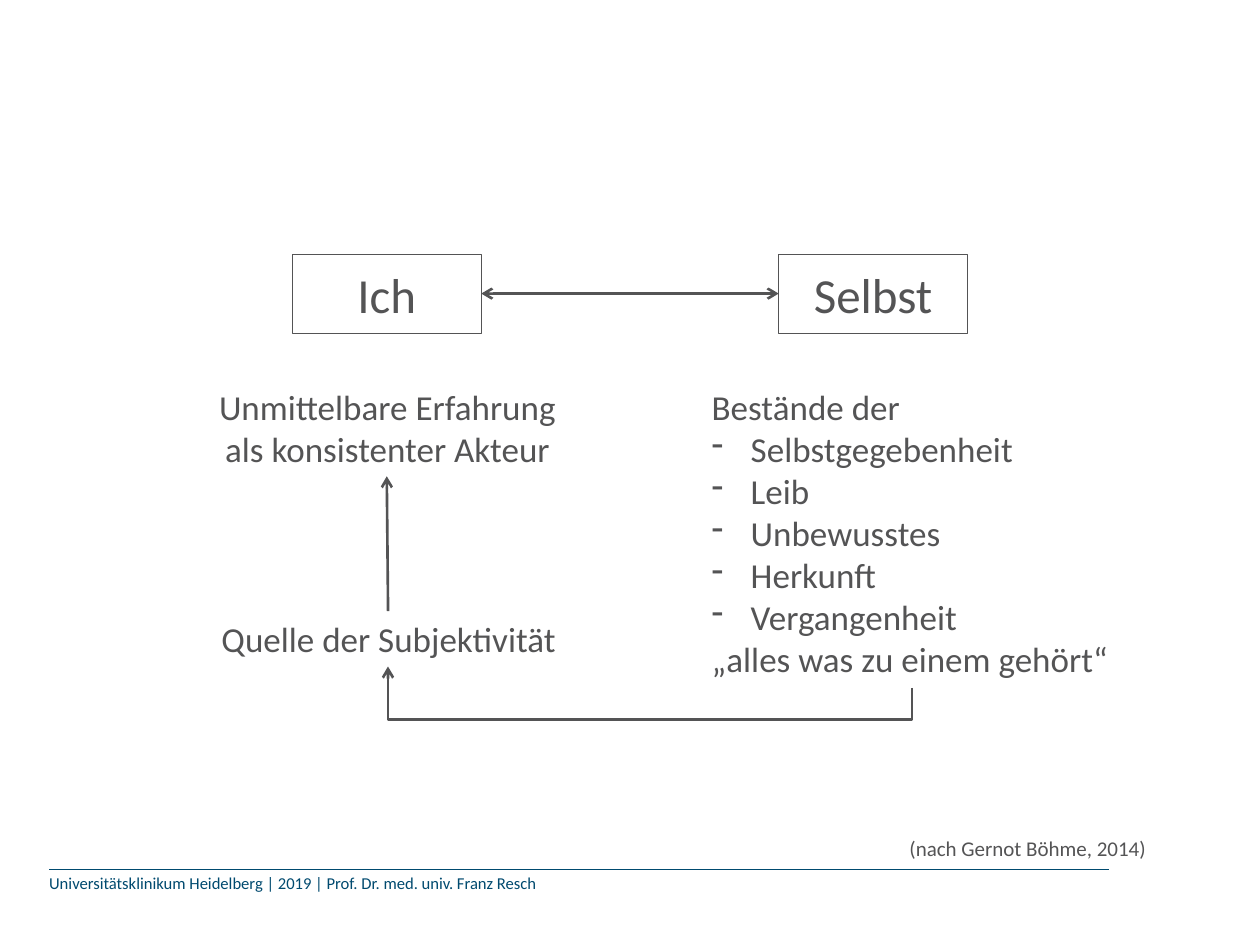
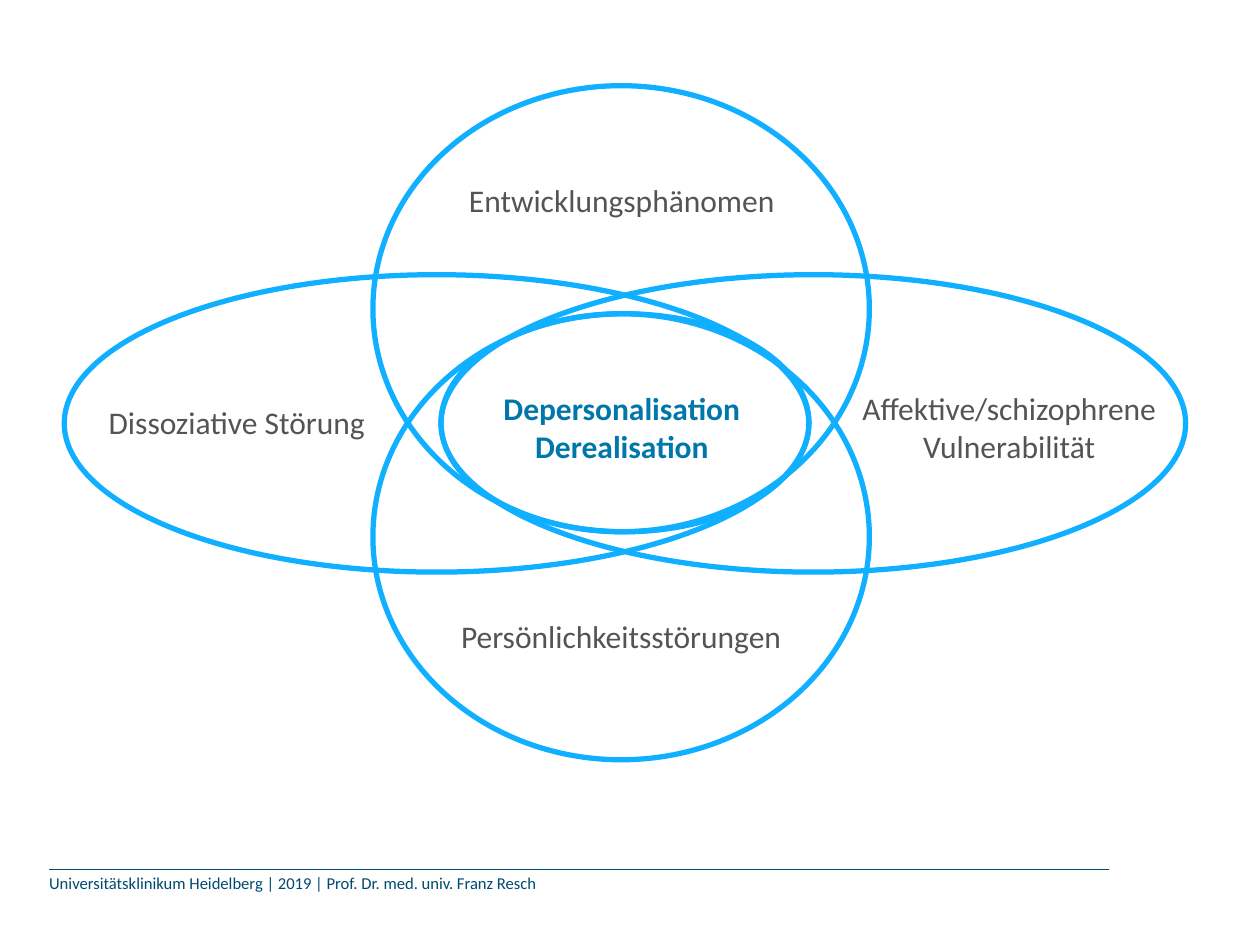
from dataclasses import dataclass

from pptx import Presentation
from pptx.dml.color import RGBColor
from pptx.enum.shapes import MSO_CONNECTOR as Connector, MSO_SHAPE as Preset
from pptx.enum.text import MSO_ANCHOR as Anchor, PP_ALIGN as Align
from pptx.oxml.ns import qn
from pptx.oxml.xmlchemy import OxmlElement
from pptx.util import Inches, Pt

WIDTH, HEIGHT = Inches(10), Inches(7.5)


@dataclass(frozen=True)
class Theme:
    font: str = "Calibri"
    grey: str = "545455"
    navy: str = "004A6F"
    blue: str = "0077AA"
    sky: str = "10AFFF"
    footer_size: float = 9.5
    source_size: float = 12
    label_size: float = 18
    body_size: float = 20
    box_size: float = 28
    hairline: float = 0.75
    arrow: float = 1.5
    ring: float = 3


THEME = Theme()


def across(percent):
    """Share of the slide width, in percent."""
    return round(WIDTH * percent / 100)


def down(percent):
    """Share of the slide height, in percent."""
    return round(HEIGHT * percent / 100)


def area(left, top, width, height):
    return across(left), down(top), across(width), down(height)


def write(frame, lines, size, color=THEME.grey, bold=False, align=Align.CENTER):
    frame.text = "\n".join(lines)
    for para in frame.paragraphs:
        if para.text.startswith("- "):
            para.text = para.text[2:]
            add_dash(para)
        para.alignment = align
        for span in para.runs:
            span.font.name = THEME.font
            span.font.size = Pt(size)
            span.font.bold = bold
            span.font.color.rgb = RGBColor.from_string(color)


def add_dash(para):
    """Turn the paragraph into a hanging item with a dash bullet."""
    indent = Inches(0.31)
    properties = para._p.get_or_add_pPr()
    properties.set("marL", str(indent))
    properties.set("indent", str(-indent))
    bullet = OxmlElement("a:buChar")
    bullet.set("char", "-")
    properties.append(bullet)


def add_text(page, place, lines, size, wrap=False, **style):
    box = page.shapes.add_textbox(*area(*place))
    box.text_frame.word_wrap = wrap
    write(box.text_frame, lines, size, **style)
    return box


def add_outline(page, preset, place, color, weight):
    shape = page.shapes.add_shape(preset, *area(*place))
    shape.shadow.inherit = False
    shape.fill.background()
    shape.line.color.rgb = RGBColor.from_string(color)
    shape.line.width = Pt(weight)
    return shape


def add_line(page, begin, end, color=THEME.grey, weight=THEME.arrow,
             arrows=(), kind=Connector.STRAIGHT):
    """Connect two points given in EMU; arrows names the ends with a head."""
    line = page.shapes.add_connector(kind, *begin, *end)
    line.line.color.rgb = RGBColor.from_string(color)
    line.line.width = Pt(weight)
    properties = line.element.spPr
    for name in arrows:
        tip = OxmlElement(f"a:{name}")
        tip.set("type", "arrow")
        properties.find(qn("a:ln")).append(tip)
    properties.append(OxmlElement("a:effectLst"))
    return line


def add_loop_below(page, begin, end, drop):
    """Elbow arrow leading left, running the given drop below its beginning."""
    (begin_x, begin_y), (end_x, end_y) = begin, end
    middle_x, middle_y = (begin_x + end_x) // 2, (begin_y + end_y) // 2
    rise, reach = begin_y - end_y, begin_x - end_x
    # The elbow lies upright before the quarter turn.
    loop = add_line(
        page,
        (middle_x + rise // 2, middle_y - reach // 2),
        (middle_x - rise // 2, middle_y + reach // 2),
        arrows=("tailEnd",), kind=Connector.ELBOW)
    properties = loop.element.spPr
    properties.find(qn("a:xfrm")).set("rot", str(90 * 60000))
    bend = OxmlElement("a:gd")
    bend.set("name", "adj1")
    bend.set("fmla", f"val {round(-100000 * drop / rise)}")
    properties.find(qn("a:prstGeom")).get_or_add_avLst().append(bend)


def add_page(deck):
    """Blank page with the footer rule and line."""
    page = deck.slides.add_slide(deck.slide_layouts[6])
    add_line(page, (across(3.9), down(92)), (across(88), down(92)),
             THEME.navy, THEME.hairline)
    footer = add_text(
        page, (3.9, 92.4, 78.7, 2.13),
        ["Universitätsklinikum Heidelberg | 2019 | Prof. Dr. med. univ. Franz Resch"],
        THEME.footer_size, wrap=True, color=THEME.navy, align=Align.LEFT)
    frame = footer.text_frame
    frame.margin_left = frame.margin_right = 0
    frame.margin_top = frame.margin_bottom = 0
    return page


def build_self_model(deck):
    page = add_page(deck)
    for left, name in ((23.2, "Ich"), (61.8, "Selbst")):
        box = add_outline(page, Preset.RECTANGLE, (left, 26.93, 15, 8.4),
                          THEME.grey, THEME.hairline)
        box.text_frame.vertical_anchor = Anchor.MIDDLE
        write(box.text_frame, [name], THEME.box_size)

    add_text(page, (55.5, 40.13, 33.8, 32.8),
             ["Bestände der", "- Selbstgegebenheit", "- Leib", "- Unbewusstes",
              "- Herkunft", "- Vergangenheit", "„alles was zu einem gehört“"],
             THEME.body_size, align=Align.LEFT)
    add_text(page, (16.2, 40.13, 29.1, 10.27),
             ["Unmittelbare Erfahrung", "als konsistenter Akteur"], THEME.body_size)
    add_text(page, (16.4, 64.67, 28.9, 5.87),
             ["Quelle der Subjektivität"], THEME.body_size)

    add_line(page, (across(38.2), down(31.07)), (across(61.8), down(31.07)),
             arrows=("headEnd", "tailEnd"))
    add_loop_below(page, (across(72.4), down(72.8)), (across(30.8), down(70.53)),
                   drop=down(3.33))
    add_line(page, (across(30.8), down(64.67)), (across(30.7), down(50.4)),
             arrows=("tailEnd",))
    add_text(page, (71.2, 87.73, 21.4, 4), ["(nach Gernot Böhme, 2014)"],
             THEME.source_size, align=Align.LEFT)


def build_overlap(deck):
    page = add_page(deck)
    add_text(page, (36.9, 40.53, 24.9, 9.47), ["Depersonalisation", "Derealisation"],
             THEME.label_size, wrap=True, color=THEME.blue, bold=True)
    labels = (
        ((33.1, 18.53, 32.5, 5.33), ["Entwicklungsphänomen"]),
        ((5.1, 42, 27.4, 5.33), ["Dissoziative Störung"]),
        ((65.7, 40.53, 28.8, 9.47), ["Affektive/schizophrene", "Vulnerabilität"]),
        ((32.2, 64.67, 34.2, 5.33), ["Persönlichkeitsstörungen"]),
    )
    for place, lines in labels:
        add_text(page, place, lines, THEME.label_size, wrap=True)

    upper, lower = (29.6, 9.07, 39.4, 47.2), (29.6, 33.2, 39.4, 47.2)
    left, right = (5.1, 29.07, 59.1, 31.47), (35, 29.07, 59.1, 31.47)
    core = (right[0], lower[1],
            left[0] + left[2] - right[0], upper[1] + upper[3] - lower[1])
    for place in (upper, left, lower, right, core):
        add_outline(page, Preset.OVAL, place, THEME.sky, THEME.ring)


def main():
    deck = Presentation()
    deck.slide_width, deck.slide_height = WIDTH, HEIGHT
    build_self_model(deck)
    build_overlap(deck)
    deck.save("out.pptx")


if __name__ == "__main__":
    main()
